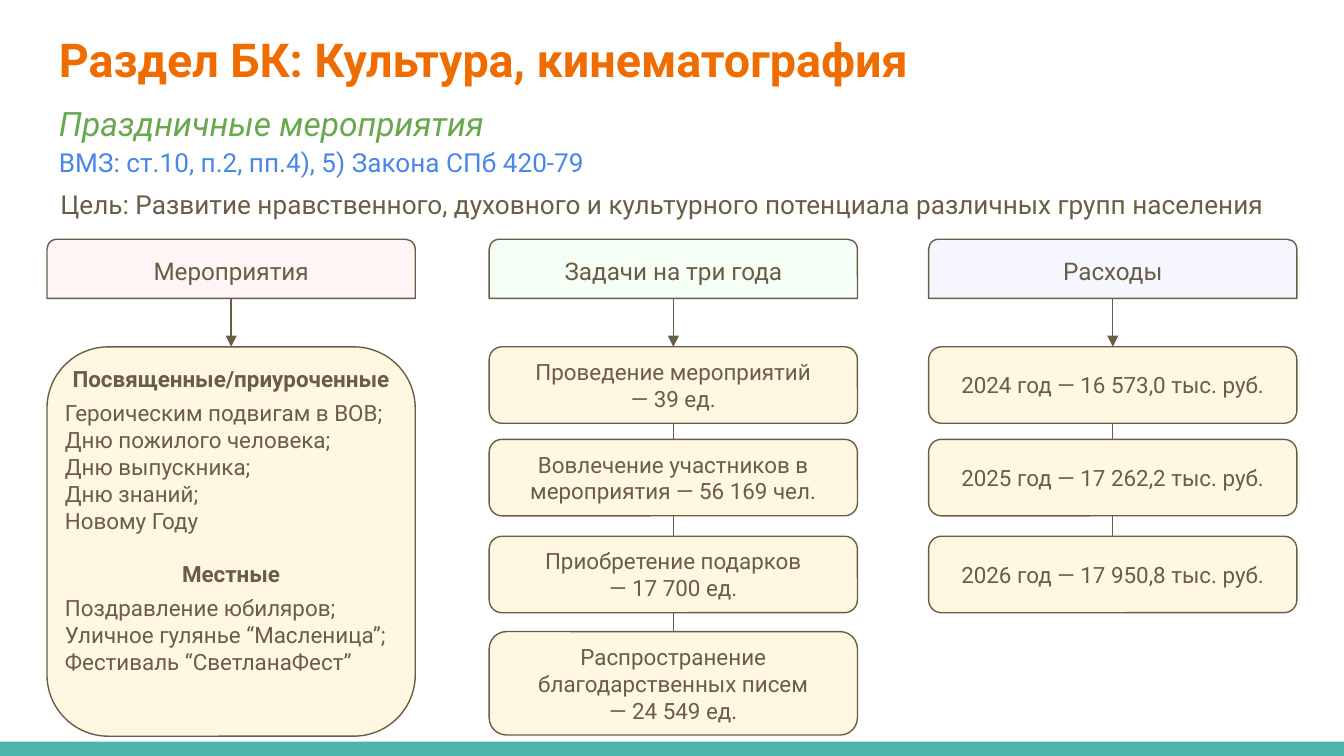
from lxml import etree
from pptx import Presentation
from pptx.dml.color import RGBColor
from pptx.enum import shapes, text
from pptx.oxml import ns
from pptx.util import Pt

BROWN, CREAM = "695D46", "FFF7E1"
COLUMN_W = 197.3
HEADER_TOP, HEADER_H = 128.2, 31.7
BODY_TOP = 185.8
STEP_TOPS = (185.8, 235.4, 287.3, 338.4)
STEP_H, LAST_STEP_H = 41, 55.4

EVENT_GROUPS = (
    ("Посвященные/приуроченные", (
        "Героическим подвигам в ВОВ;", "Дню пожилого человека;",
        "Дню выпускника;", "Дню знаний;", "Новому Году")),
    ("Местные", (
        "Поздравление юбиляров;", "Уличное гулянье “Масленица”;",
        "Фестиваль “СветланаФест”")),
)
TASKS = (
    ("Проведение мероприятий", "— 39 ед."),
    ("Вовлечение участников в мероприятия — 56 169 чел.",),
    ("Приобретение подарков", "— 17 700 ед."),
    ("Распространение благодарственных писем", "— 24 549 ед."),
)
EXPENSES = (
    ("2024 год — 16 573,0 тыс. руб.",),
    ("2025 год — 17 262,2 тыс. руб.",),
    ("2026 год — 17 950,8 тыс. руб.",),
)


def color(hex_code):
    return RGBColor.from_string(hex_code)


def write(frame, content, size=12, fill=BROWN, bold=False, italic=False,
          centered=False, before=0, after=0, spacing=1.0):
    """Add one paragraph, using the frame's first one while it is empty."""
    paragraph = frame.paragraphs[0]
    if paragraph.runs:
        paragraph = frame.add_paragraph()
    paragraph.alignment = (text.PP_ALIGN.CENTER if centered
                           else text.PP_ALIGN.LEFT)
    paragraph.space_before, paragraph.space_after = Pt(before), Pt(after)
    paragraph.line_spacing = spacing
    run = paragraph.add_run()
    run.text = content
    run.font.name, run.font.size = "Roboto", Pt(size)
    run.font.bold, run.font.italic = bold, italic
    run.font.color.rgb = color(fill)


def set_frame(frame, anchor, horizontal, vertical):
    frame.word_wrap = True
    frame.vertical_anchor = anchor
    frame.margin_left = frame.margin_right = Pt(horizontal)
    frame.margin_top = frame.margin_bottom = Pt(vertical)


def add_heading(slide, left, top, width, height, content,
                anchor=text.MSO_ANCHOR.TOP, **style):
    box = slide.shapes.add_textbox(Pt(left), Pt(top), Pt(width), Pt(height))
    set_frame(box.text_frame, anchor, 7.2, 7.2)
    write(box.text_frame, content, **style)


def add_block(slide, kind, left, top, width, height, fill, outline=None):
    block = slide.shapes.add_shape(kind, Pt(left), Pt(top), Pt(width), Pt(height))
    block.shadow.inherit = False
    block.fill.solid()
    block.fill.fore_color.rgb = color(fill)
    if outline:
        block.line.color.rgb = color(outline)
        block.line.width = Pt(0.75)
    else:
        block.line.fill.background()
    return block


def add_link(slide, x, top, bottom, arrow=False):
    link = slide.shapes.add_connector(
        shapes.MSO_CONNECTOR.STRAIGHT, Pt(x), Pt(top), Pt(x), Pt(bottom))
    link.line.color.rgb = color(BROWN)
    link.line.width = Pt(0.75)
    if arrow:
        etree.SubElement(link.line._get_or_add_ln(), ns.qn("a:tailEnd"),
                         type="triangle")
    etree.SubElement(link._element.spPr, ns.qn("a:effectLst"))


def add_column_header(slide, left, title, fill):
    """Place the header and the arrow down to the column's first box."""
    header = add_block(slide, shapes.MSO_SHAPE.ROUND_2_SAME_RECTANGLE, left,
                       HEADER_TOP, COLUMN_W, HEADER_H, fill, BROWN)
    set_frame(header.text_frame, text.MSO_ANCHOR.MIDDLE, 5, 3)
    write(header.text_frame, title, size=13, centered=True)
    add_link(slide, left + COLUMN_W / 2, HEADER_TOP + HEADER_H, BODY_TOP,
             arrow=True)


def add_events(slide, left, top, width, height):
    panel = add_block(slide, shapes.MSO_SHAPE.ROUNDED_RECTANGLE,
                      left, top, width, height, CREAM, BROWN)
    frame = panel.text_frame
    set_frame(frame, text.MSO_ANCHOR.TOP, 0, 0)
    for index, (group, events) in enumerate(EVENT_GROUPS):
        write(frame, group, bold=True, centered=True,
              before=14 if index else 0, after=4)
        for event in events:
            write(frame, event)


def add_steps(slide, left, width, steps):
    """Stack linked boxes, each step being a tuple of paragraphs."""
    previous_bottom = None
    for index, (top, lines) in enumerate(zip(STEP_TOPS, steps)):
        height = LAST_STEP_H if index == len(STEP_TOPS) - 1 else STEP_H
        step = add_block(slide, shapes.MSO_SHAPE.ROUNDED_RECTANGLE,
                         left, top, width, height, CREAM, BROWN)
        set_frame(step.text_frame, text.MSO_ANCHOR.MIDDLE, 5, 3)
        for line in lines:
            write(step.text_frame, line, centered=True)
        if previous_bottom is not None:
            add_link(slide, left + width / 2, previous_bottom, top)
        previous_bottom = top + height


def add_headings(slide, left, width):
    add_heading(slide, left, 8.6, width, 45.4,
                "Раздел БК: Культура, кинематография",
                anchor=text.MSO_ANCHOR.BOTTOM, size=25, fill="EF6C00", bold=True)
    add_heading(slide, left, 44.6, width, 33.1, "Праздничные мероприятия",
                size=18, fill="6AA84F", italic=True, spacing=1.15, after=12)
    add_heading(slide, left, 71.3, width, 31.7,
                "ВМЗ: ст.10, п.2, пп.4), 5) Закона СПб 420-79",
                size=14, fill="4A86E8")
    add_heading(slide, left + 0.7, 93.6, width, 31.7,
                "Цель: Развитие нравственного, духовного и культурного "
                "потенциала различных групп населения", size=14)


def main():
    deck = Presentation()
    deck.slide_width, deck.slide_height = Pt(720), Pt(405)
    slide = deck.slides.add_slide(deck.slide_layouts[6])

    add_block(slide, shapes.MSO_SHAPE.RECTANGLE, 0, 397.4, 720, 7.6, "4DB6AC")
    add_headings(slide, 24.5, 685)

    events_left, tasks_left, expenses_left = 25.2, 262.1, 497.5
    add_column_header(slide, events_left, "Мероприятия", "FFF5F5")
    add_events(slide, events_left, BODY_TOP, COLUMN_W, 208.6)
    add_column_header(slide, tasks_left, "Задачи на три года", "F6FFF5")
    add_steps(slide, tasks_left, COLUMN_W, TASKS)
    add_column_header(slide, expenses_left, "Расходы", "F5F6FF")
    add_steps(slide, expenses_left, COLUMN_W, EXPENSES)

    deck.save("out.pptx")


if __name__ == "__main__":
    main()
